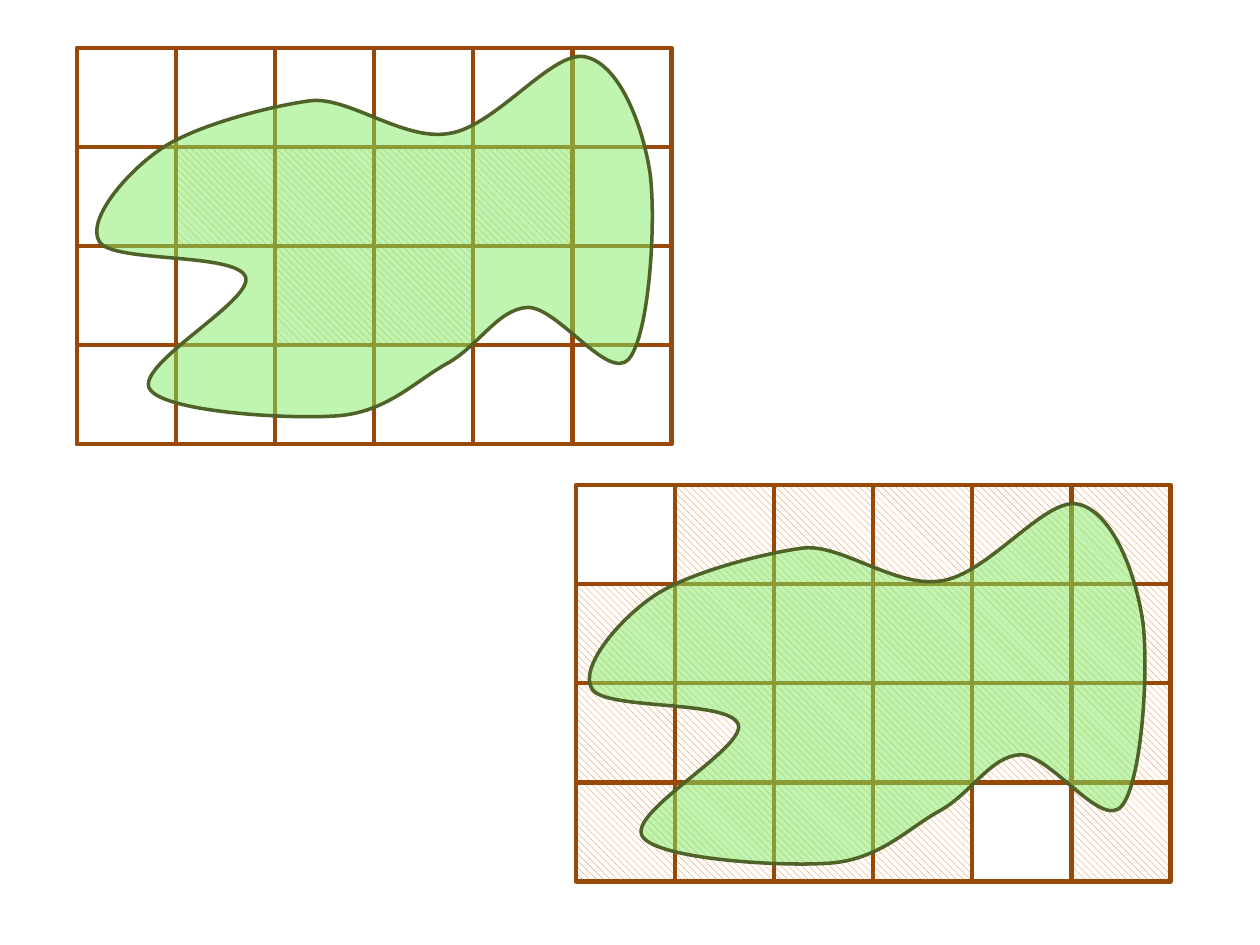
from lxml import etree
from pptx import Presentation
from pptx.dml.color import RGBColor
from pptx.enum import dml, shapes
from pptx.oxml.ns import qn
from pptx.util import Inches, Pt

BROWN = RGBColor(0x98, 0x48, 0x07)
ORANGE = RGBColor(0xE4, 0x6C, 0x0A)
WHITE = RGBColor(0xFF, 0xFF, 0xFF)
LIGHT_GREEN = RGBColor(0x83, 0xEB, 0x67)
DARK_GREEN = RGBColor(0x4F, 0x62, 0x28)

CELL = Inches(4.72) // 6

# Left, top of the grid; left, top of the region; cells ("#" is hatched)
FIGURES = [
    (4.57, 3.85, 4.68, 3.99, [".#####", "######", "######", "####.#"]),
    (0.61, 0.38, 0.77, 0.44, ["......", ".####.", "..##..", "......"]),
]

# Region outline in hundredths of an inch: two control points and an end point per curve
START = (2, 148)
CURVES = [
    [(13, 165), (111, 156), (118, 176)],
    [(124, 195), (29, 246), (42, 265)],
    [(54, 283), (152, 289), (191, 286)],
    [(230, 283), (252, 259), (277, 245)],
    [(303, 231), (318, 201), (342, 200)],
    [(366, 200), (406, 259), (422, 241)],
    [(438, 223), (444, 134), (439, 94)],
    [(433, 54), (414, 6), (387, 1)],
    [(361, -4), (316, 57), (279, 62)],
    [(243, 68), (199, 32), (169, 36)],
    [(139, 40), (79, 55), (51, 74)],
    [(23, 93), (-9, 131), START],
]


def add_grid(slide, left, top, rows):
    """Add a group of square cells, hatching those marked "#"."""
    group = slide.shapes.add_group_shape()
    for row, marks in enumerate(rows):
        for column, mark in enumerate(marks):
            cell = group.shapes.add_shape(
                shapes.MSO_SHAPE.RECTANGLE,
                left + column * CELL, top + row * CELL, CELL, CELL)
            cell.shadow.inherit = False
            cell.line.color.rgb = BROWN
            cell.line.width = Pt(2.5)
            if mark == "#":
                cell.fill.patterned()
                cell.fill.pattern = dml.MSO_PATTERN.WIDE_DOWNWARD_DIAGONAL
                cell.fill.fore_color.rgb = ORANGE
                cell.fill.back_color.rgb = WHITE
            else:
                cell.fill.background()


def add_region(slide, left, top):
    """Add the translucent region, turning straight segments into curves."""
    ends = [curve[-1] for curve in CURVES]
    builder = slide.shapes.build_freeform(*START, scale=Inches(0.01))
    builder.add_line_segments(ends, close=True)
    region = builder.convert_to_shape(left, top)

    min_x = min(x for x, y in ends)
    min_y = min(y for x, y in ends)
    segments = list(region._element.iter(qn("a:lnTo")))
    for segment, curve in zip(segments, CURVES):
        segment.tag = qn("a:cubicBezTo")
        for index, (x, y) in enumerate(curve[:2]):
            point = etree.Element(qn("a:pt"), x=str(x - min_x), y=str(y - min_y))
            segment.insert(index, point)

    region.shadow.inherit = False
    region.fill.solid()
    region.fill.fore_color.rgb = LIGHT_GREEN
    color = next(region._element.spPr.iter(qn("a:srgbClr")))
    etree.SubElement(color, qn("a:alpha"), val="51000")
    region.line.color.rgb = DARK_GREEN
    region.line.width = Pt(2)


presentation = Presentation()
presentation.slide_width = Inches(10)
presentation.slide_height = Inches(7.5)
slide = presentation.slides.add_slide(presentation.slide_layouts[6])

for grid_left, grid_top, region_left, region_top, rows in FIGURES:
    add_grid(slide, Inches(grid_left), Inches(grid_top), rows)
    add_region(slide, Inches(region_left), Inches(region_top))

presentation.save("out.pptx")
